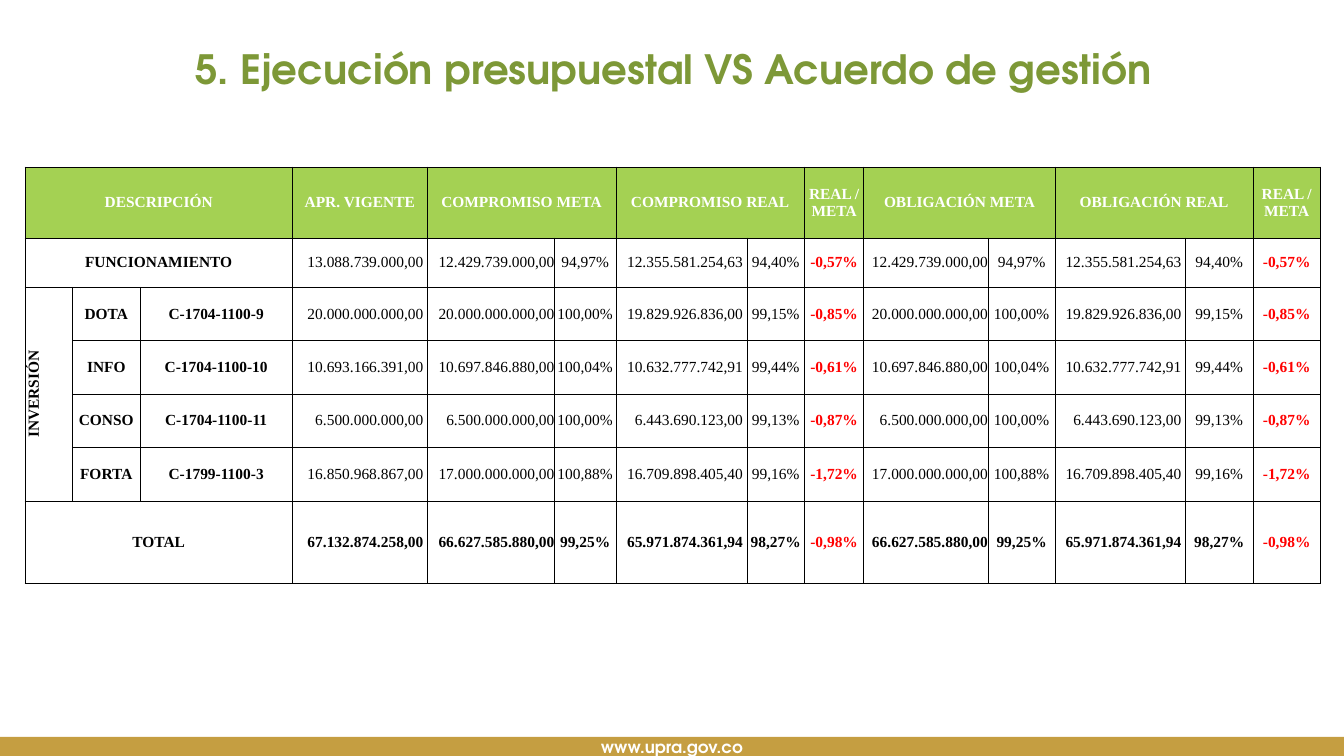
import pptx
import pptx.dml.color
import pptx.enum.shapes
import pptx.enum.text
import pptx.oxml
import pptx.oxml.ns
import pptx.util

Inches = pptx.util.Inches
ALIGN = pptx.enum.text.PP_ALIGN
MIDDLE = pptx.enum.text.MSO_ANCHOR.MIDDLE
TOP = pptx.enum.text.MSO_ANCHOR.TOP
TITLE_FONT, TABLE_FONT = "TeX Gyre Adventor", "Times New Roman"
WHITE, BLACK, RED = "FFFFFF", "000000", "FF0000"
OLIVE, GREEN, GOLD = "7D9837", "A4D153", "C59E41"

COLUMN_WIDTHS = [0.47, 0.67, 1.51, 1.34, 1.26, 0.61, 1.3, 0.57, 0.59, 1.23, 0.67, 1.29, 0.67, 0.67]
ROW_HEIGHTS = [0.7, 0.49, 0.53, 0.53, 0.53, 0.53, 0.82]
GROUP_STARTS = (0, 4, 9, 14)
AMOUNT_COLUMNS = (3, 4, 6, 9, 11)
META_COLUMNS = (4, 9)
RATIO_COLUMNS = (8, 13)
MERGES = [(0, 0, 0, 2), (0, 4, 0, 5), (0, 6, 0, 7), (0, 9, 0, 10), (0, 11, 0, 12),
          (1, 0, 1, 2), (2, 0, 5, 0), (6, 0, 6, 2)]
HEADERS = ["DESCRIPCIÓN", "", "", "APR. VIGENTE", "COMPROMISO META", "", "COMPROMISO REAL", "",
           "REAL / META", "OBLIGACIÓN META", "", "OBLIGACIÓN REAL", "", "REAL / META"]
BUDGET_LINES = [
    (["FUNCIONAMIENTO", "", ""], "13.088.739.000,00",
     ["12.429.739.000,00", "94,97%", "12.355.581.254,63", "94,40%", "-0,57%"]),
    (["INVERSIÓN", "DOTA", "C-1704-1100-9"], "20.000.000.000,00",
     ["20.000.000.000,00", "100,00%", "19.829.926.836,00", "99,15%", "-0,85%"]),
    (["", "INFO", "C-1704-1100-10"], "10.693.166.391,00",
     ["10.697.846.880,00", "100,04%", "10.632.777.742,91", "99,44%", "-0,61%"]),
    (["", "CONSO", "C-1704-1100-11"], "6.500.000.000,00",
     ["6.500.000.000,00", "100,00%", "6.443.690.123,00", "99,13%", "-0,87%"]),
    (["", "FORTA", "C-1799-1100-3"], "16.850.968.867,00",
     ["17.000.000.000,00", "100,88%", "16.709.898.405,40", "99,16%", "-1,72%"]),
    (["TOTAL", "", ""], "67.132.874.258,00",
     ["66.627.585.880,00", "99,25%", "65.971.874.361,94", "98,27%", "-0,98%"]),
]


def color(value):
    """Turn a hex string into a colour."""
    return pptx.dml.color.RGBColor.from_string(value)


def apply_format(target, values):
    """Set every attribute named in a dict of format values."""
    for name, value in values.items():
        setattr(target, name, value)


def write_text(paragraph, text, alignment, size, font_name, font_color, bold=True):
    """Write one formatted paragraph."""
    paragraph.text = text
    paragraph.alignment = alignment
    apply_format(paragraph.font, {"size": pptx.util.Pt(size), "name": font_name, "bold": bold})
    paragraph.font.color.rgb = color(font_color)


def add_title(slide, left, top, width, height):
    """Place the slide title in the title placeholder."""
    title = slide.shapes.title
    apply_format(title, {"left": Inches(left), "top": Inches(top),
                         "width": Inches(width), "height": Inches(height)})
    apply_format(title.text_frame, {"word_wrap": True, "vertical_anchor": TOP, "margin_left": 0,
                                    "auto_size": pptx.enum.text.MSO_AUTO_SIZE.NONE})
    paragraph = title.text_frame.paragraphs[0]
    write_text(paragraph, "5. Ejecución presupuestal VS Acuerdo de gestión",
               ALIGN.RIGHT, 28.8, TITLE_FONT, OLIVE)
    paragraph.line_spacing = 0.9


def add_footer(slide, left, top, width, height):
    """Draw the band with the web address."""
    band = slide.shapes.add_shape(pptx.enum.shapes.MSO_SHAPE.RECTANGLE, Inches(left),
                                  Inches(top), Inches(width), Inches(height))
    band.shadow.inherit = False
    band.fill.solid()
    band.fill.fore_color.rgb = color(GOLD)
    band.line.fill.background()
    apply_format(band.text_frame, {"vertical_anchor": MIDDLE, "margin_top": 0, "margin_bottom": 0})
    write_text(band.text_frame.paragraphs[0], "www.upra.gov.co", ALIGN.CENTER, 12, TITLE_FONT, WHITE)


def add_borders(cell, row, column):
    """Line a cell, with heavier lines round the table and its column groups."""
    heavy_edges = {"lnL": column in GROUP_STARTS, "lnR": column + 1 in GROUP_STARTS,
                   "lnT": row == 0, "lnB": row == len(ROW_HEIGHTS) - 1}
    properties = cell._tc.get_or_add_tcPr()
    for tag, heavy in heavy_edges.items():
        properties.append(pptx.oxml.parse_xml(
            f'<a:{tag} {pptx.oxml.ns.nsdecls("a")} w="{12700 if heavy else 6350}">'
            f'<a:solidFill><a:srgbClr val="{BLACK}"/></a:solidFill></a:{tag}>'))


def format_cell(cell, row, column, text):
    """Fill one table cell according to its row and column."""
    is_header = row == 0
    is_amount = column in AMOUNT_COLUMNS and not is_header
    is_ratio = column in RATIO_COLUMNS
    bold = is_header or column < 3 or is_ratio or row == len(ROW_HEIGHTS) - 1
    right_margin = Inches(0.04) if is_amount and column not in META_COLUMNS else 0
    apply_format(cell, {"vertical_anchor": MIDDLE, "margin_left": 0, "margin_top": 0,
                        "margin_bottom": 0, "margin_right": right_margin})
    add_borders(cell, row, column)
    if is_header:
        cell.fill.solid()
        cell.fill.fore_color.rgb = color(GREEN)
    else:
        cell.fill.background()
    font_color = WHITE if is_header else RED if is_ratio else BLACK
    write_text(cell.text_frame.paragraphs[0], text, ALIGN.RIGHT if is_amount else ALIGN.CENTER,
               11, TABLE_FONT, font_color, bold)


def add_budget_table(slide, left, top, width, height):
    """Build the table of commitments and obligations against their targets."""
    table = slide.shapes.add_table(len(ROW_HEIGHTS), len(COLUMN_WIDTHS), Inches(left),
                                   Inches(top), Inches(width), Inches(height)).table
    apply_format(table, {"first_row": False, "horz_banding": False})
    for column, column_width in zip(table.columns, COLUMN_WIDTHS):
        column.width = Inches(width * column_width / sum(COLUMN_WIDTHS))
    for row, row_height in zip(table.rows, ROW_HEIGHTS):
        row.height = Inches(height * row_height / sum(ROW_HEIGHTS))
    rows = [HEADERS] + [labels + [budget] + figures * 2 for labels, budget, figures in BUDGET_LINES]
    for row, texts in enumerate(rows):
        for column, text in enumerate(texts):
            format_cell(table.cell(row, column), row, column, text)
    for first_row, first_column, last_row, last_column in MERGES:
        table.cell(first_row, first_column).merge(table.cell(last_row, last_column))
    table.cell(2, 0)._tc.get_or_add_tcPr().set("vert", "vert270")


def main():
    """Build and save the presentation."""
    presentation = pptx.Presentation()
    apply_format(presentation, {"slide_width": Inches(13.33), "slide_height": Inches(7.5)})
    slide = presentation.slides.add_slide(presentation.slide_layouts[5])
    add_footer(slide, 0, 7.31, 13.33, 0.19)
    add_title(slide, 1.82, 0.44, 9.7, 0.87)
    add_budget_table(slide, 0.25, 1.66, 12.85, 4.13)
    presentation.save("out.pptx")


if __name__ == "__main__":
    main()
